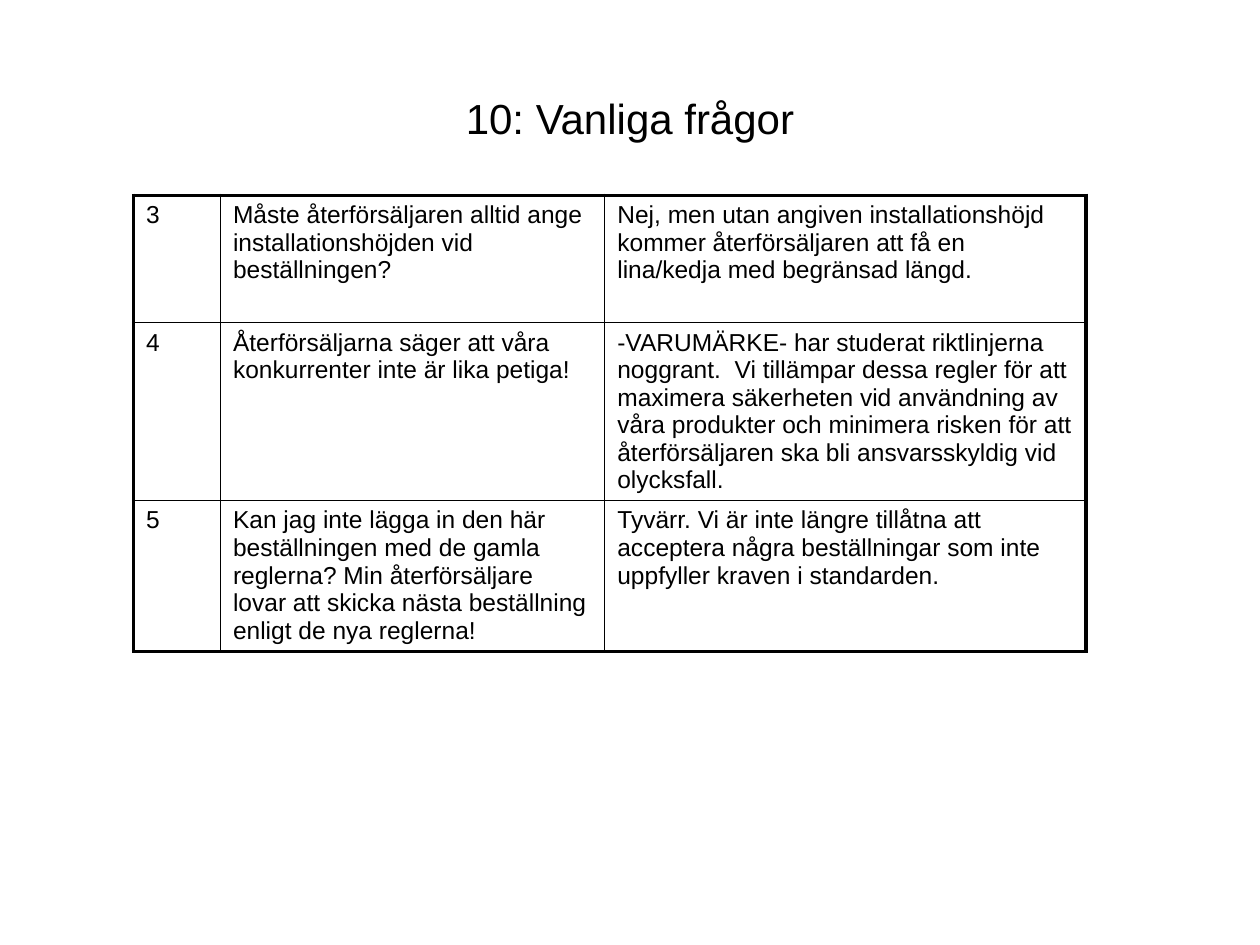
"""Build the slide of common questions and answers."""
from typing import NamedTuple

from lxml import etree
from pptx import Presentation
from pptx.dml.color import RGBColor
from pptx.enum.text import MSO_ANCHOR, PP_ALIGN
from pptx.oxml.ns import qn
from pptx.util import Inches, Pt

MID, TOP = MSO_ANCHOR.MIDDLE, MSO_ANCHOR.TOP
LEFT, MAIN = PP_ALIGN.LEFT, PP_ALIGN.CENTER
WIDE, HIGH = Inches(10), Inches(7.5)
BLACK, WHITE = "000000", "FFFFFF"
THICK, THIN = 2.25, 1
COLS = (0.69, 3.05, 3.82)
ROWS = (1.01, 1.41, 1.2)


class Box(NamedTuple):
    left: float
    top: float
    width: float
    height: float


class Entry(NamedTuple):
    number: str
    question: str
    answer: str


HEAD = Box(0.05, 0.04, 0.9, 0.17)
GRID = Box(0.11, 0.21, 0.76, 0.48)
FAQ = (
    Entry(
        "3",
        "Måste återförsäljaren alltid ange installationshöjden vid beställningen?",
        "Nej, men utan angiven installationshöjd kommer återförsäljaren att få en "
        "lina/kedja med begränsad längd.",
    ),
    Entry(
        "4",
        "Återförsäljarna säger att våra konkurrenter inte är lika petiga!",
        "-VARUMÄRKE- har studerat riktlinjerna noggrant.  Vi tillämpar dessa regler "
        "för att maximera säkerheten vid användning av våra produkter och minimera "
        "risken för att återförsäljaren ska bli ansvarsskyldig vid olycksfall.",
    ),
    Entry(
        "5",
        "Kan jag inte lägga in den här beställningen med de gamla reglerna? Min "
        "återförsäljare lovar att skicka nästa beställning enligt de nya reglerna!",
        "Tyvärr. Vi är inte längre tillåtna att acceptera några beställningar som "
        "inte uppfyller kraven i standarden.",
    ),
)


def color(code: str) -> RGBColor:
    """Turn a hex string into a colour."""
    return RGBColor.from_string(code)


def place(box: Box) -> tuple:
    """Turn shares of the slide into lengths."""
    return tuple(round(share * side) for share, side in zip(box, (WIDE, HIGH) * 2))


def write(frame, text: str, size: float, align) -> None:
    """Put one formatted paragraph into a text frame."""
    frame.word_wrap = True
    frame.text = text
    para = frame.paragraphs[0]
    para.alignment = align
    font = para.runs[0].font
    for name, value in {"name": "Arial", "size": Pt(size), "bold": False}.items():
        setattr(font, name, value)
    font.color.rgb = color(BLACK)


def edge(cell, side: str, width: float) -> None:
    """Draw one border of a cell."""
    props = cell._tc.get_or_add_tcPr()
    line = etree.SubElement(props, qn(f"a:ln{side}"), w=str(Pt(width)))
    fill = etree.SubElement(line, qn("a:solidFill"))
    etree.SubElement(fill, qn("a:srgbClr"), val=BLACK)


def add_title(slide, text: str) -> None:
    """Place and fill the title."""
    title = slide.shapes.title
    title.left, title.top, title.width, title.height = place(HEAD)
    title.text_frame.vertical_anchor = MID
    write(title.text_frame, text, 24, MAIN)


def add_faq(slide, entries: tuple[Entry, ...]) -> None:
    """Draw the table with a thick frame and thin inner lines."""
    shape = slide.shapes.add_table(len(ROWS), len(COLS), *place(GRID))
    shape.left, shape.top = Inches(1.06), Inches(1.55)
    table = shape.table
    for name in ("first_row", "horz_banding"):
        setattr(table, name, False)
    for col, width in zip(table.columns, COLS):
        col.width = Inches(width)
    for row, height in zip(table.rows, ROWS):
        row.height = Inches(height)
    for r, entry in enumerate(entries):
        for c, text in enumerate(entry):
            cell = table.cell(r, c)
            cell.vertical_anchor = TOP
            outer = {"L": c == 0, "R": c == len(COLS) - 1,
                     "T": r == 0, "B": r == len(ROWS) - 1}
            for side, rim in outer.items():
                edge(cell, side, THICK if rim else THIN)
            cell.fill.solid()
            cell.fill.fore_color.rgb = color(WHITE)
            write(cell.text_frame, text, 14, LEFT)


def main() -> None:
    """Build and save the slide."""
    deck = Presentation()
    deck.slide_width, deck.slide_height = WIDE, HIGH
    slide = deck.slides.add_slide(deck.slide_layouts[5])
    add_title(slide, "10: Vanliga frågor")
    add_faq(slide, FAQ)
    deck.save("out.pptx")


if __name__ == "__main__":
    main()
